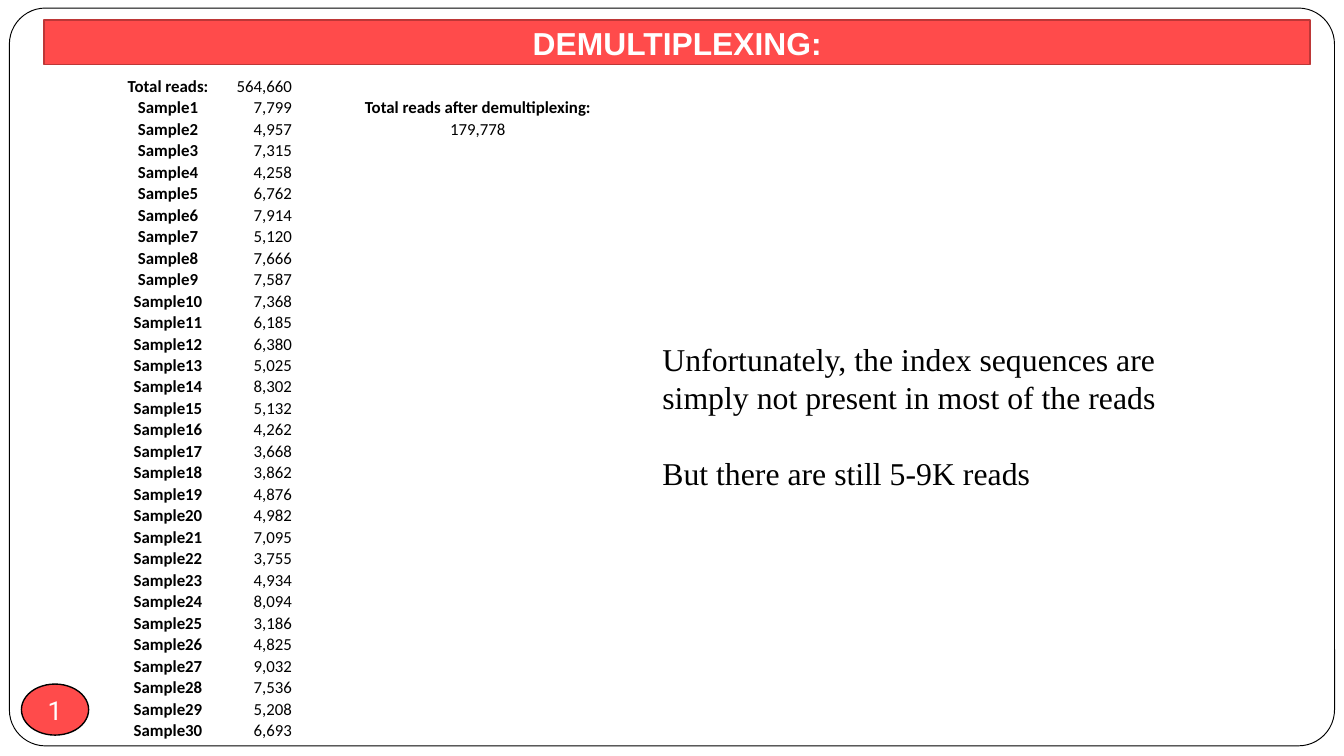
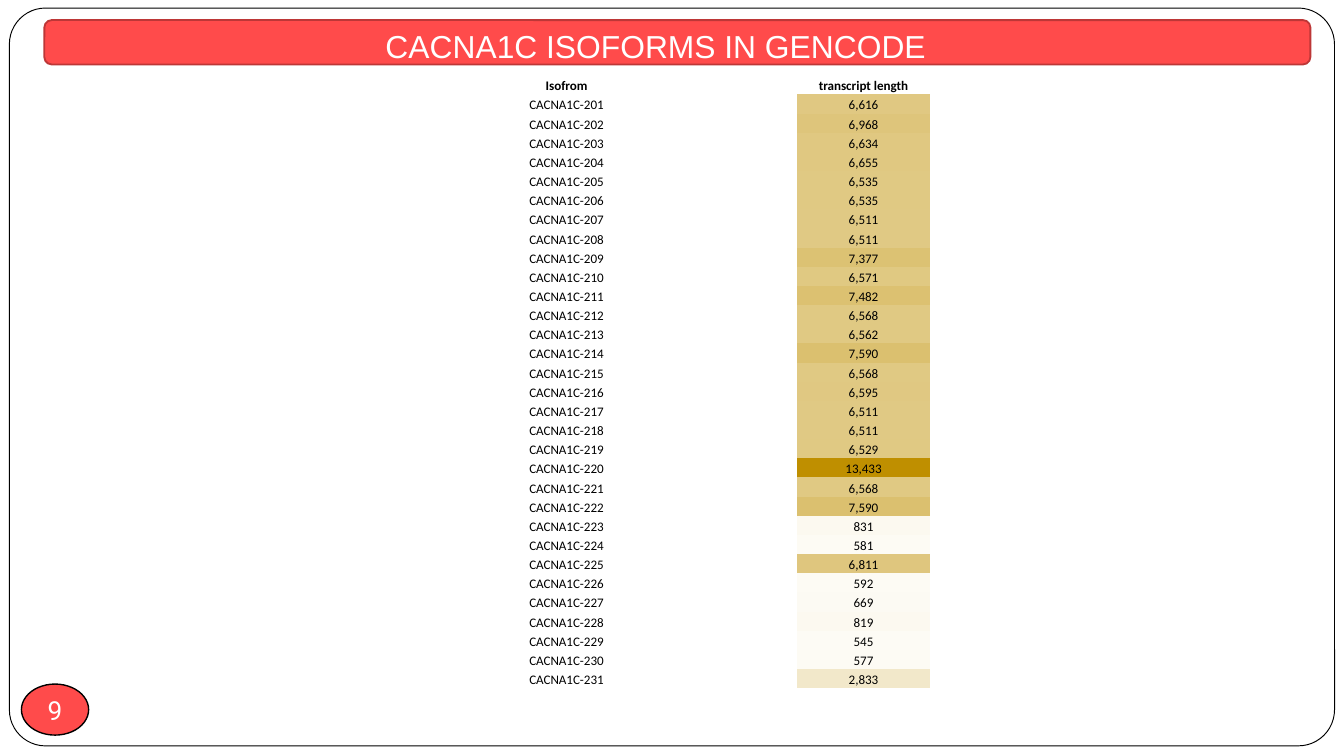
from lxml import etree
from pptx import Presentation
from pptx.dml.color import RGBColor
from pptx.enum.shapes import MSO_SHAPE
from pptx.enum.text import MSO_ANCHOR, MSO_AUTO_SIZE, PP_ALIGN
from pptx.oxml.ns import qn
from pptx.util import Inches, Pt

CENTER, LEFT, RIGHT = PP_ALIGN.CENTER, PP_ALIGN.LEFT, PP_ALIGN.RIGHT
TOP, MIDDLE, BOTTOM = MSO_ANCHOR.TOP, MSO_ANCHOR.MIDDLE, MSO_ANCHOR.BOTTOM
ROUNDED, OVAL = MSO_SHAPE.ROUNDED_RECTANGLE, MSO_SHAPE.OVAL

WHITE = RGBColor(0xFF, 0xFF, 0xFF)
BLACK = RGBColor(0x00, 0x00, 0x00)
RED = RGBColor(0xFF, 0x4B, 0x4B)
DARK_RED = RGBColor(0xBD, 0x37, 0x37)
PALE_GOLD = RGBColor(0xFD, 0xFB, 0xF5)
GOLD = RGBColor(0xBF, 0x8F, 0x00)

NO_STYLE_NO_GRID = "{2D5ABB26-0587-4C30-8999-92F81FD0307C}"
CELL_MARGIN = Pt(0.56)
FRAME = (0.07, 0.06, 9.86, 5.49)
BAND = (0.33, 0.15, 9.42, 0.33)
BADGE = (0.16, 5.09, 0.5, 0.38)

# Content
TOTAL_READS = 564660
SAMPLE_READS = [
    7799, 4957, 7315, 4258, 6762, 7914, 5120, 7666, 7587, 7368,
    6185, 6380, 5025, 8302, 5132, 4262, 3668, 3862, 4876, 4982,
    7095, 3755, 4934, 8094, 3186, 4825, 9032, 7536, 5208, 6693,
]
DEMULTIPLEXED = {1: "Total reads after demultiplexing:", 2: "179,778"}
REMARKS = [
    "Unfortunately, the index sequences are simply not present in most of the reads",
    "But there are still 5-9K reads",
]
TRANSCRIPT_LENGTHS = [
    6616, 6968, 6634, 6655, 6535, 6535, 6511, 6511, 7377, 6571, 7482,
    6568, 6562, 7590, 6568, 6595, 6511, 6511, 6529, 13433, 6568, 7590,
    831, 581, 6811, 592, 669, 819, 545, 577, 2833,
]


def box(position):
    return [Inches(value) for value in position]


def style(paragraph, font_name, size, color, bold=False, align=LEFT):
    paragraph.alignment = align
    font = paragraph.font
    font.name, font.size, font.bold = font_name, Pt(size), bold
    font.color.rgb = color


def paint(shape, fill, line, width):
    shape.fill.solid()
    shape.fill.fore_color.rgb = fill
    shape.line.color.rgb = line
    shape.line.width = Pt(width)


def add_panel(slide, kind, position, fill, line, width):
    shape = slide.shapes.add_shape(kind, *box(position))
    shape.shadow.inherit = False
    paint(shape, fill, line, width)
    return shape


def add_frame(slide):
    """Draw the page frame, then move it to the layout that all slides share."""
    frame = add_panel(slide, ROUNDED, FRAME, WHITE, BLACK, 0.5)
    frame.adjustments[0] = 0.049
    slide.slide_layout.shapes.element.insert(2, frame.element)


def add_badge(slide, number):
    badge = add_panel(slide, OVAL, BADGE, RED, BLACK, 0.75)
    text = badge.text_frame
    text.margin_left = text.margin_right = text.margin_top = text.margin_bottom = 0
    text.word_wrap = False
    text.vertical_anchor = MIDDLE
    text.text = str(number)
    style(text.paragraphs[0], "Roboto", 14, WHITE, align=CENTER)


def set_title(slide, wording, position, bold, anchor):
    title = slide.shapes.title
    title.left, title.top, title.width, title.height = box(position)
    text = title.text_frame
    text.text = wording
    text.auto_size = MSO_AUTO_SIZE.NONE
    text.vertical_anchor = anchor
    style(text.paragraphs[0], "Arial", 17, WHITE, bold, CENTER)
    return title


def add_grid(slide, rows, position, column_widths, size, aligns, is_bold, fill_for):
    frame = slide.shapes.add_table(len(rows), len(column_widths), *box(position))
    table = frame.table
    table.first_row = table.horz_banding = False
    table._tbl.tblPr.find(qn("a:tableStyleId")).text = NO_STYLE_NO_GRID
    for column, width in zip(table.columns, column_widths):
        column.width = Inches(width)
    for row_index, values in enumerate(rows):
        table.rows[row_index].height = Inches(position[3] / len(rows))
        for column_index, value in enumerate(values):
            cell = table.cell(row_index, column_index)
            cell.margin_left = cell.margin_right = cell.margin_top = CELL_MARGIN
            cell.margin_bottom = 0
            cell.vertical_anchor = BOTTOM
            color = fill_for(value)
            if color is None:
                cell.fill.background()
            else:
                cell.fill.solid()
                cell.fill.fore_color.rgb = color
            paragraph = cell.text_frame.paragraphs[0]
            style(paragraph, "Calibri", size, BLACK,
                  is_bold(row_index, column_index), aligns[column_index])
            if value:
                paragraph.text = f"{value:,}" if isinstance(value, int) else value
            else:
                # Keeps empty cells from stretching the row
                etree.SubElement(paragraph._p, qn("a:endParaRPr"), sz=str(size * 100))


def length_color(value):
    """Shade a transcript length between the shortest and the longest."""
    if not isinstance(value, int):
        return None
    low, high = min(TRANSCRIPT_LENGTHS), max(TRANSCRIPT_LENGTHS)
    share = (value - low) / (high - low)
    return RGBColor(*(round(a + (b - a) * share) for a, b in zip(PALE_GOLD, GOLD)))


def build_demultiplexing(slide):
    # The title is its own band here
    add_badge(slide, 1)
    title = set_title(slide, "DEMULTIPLEXING:", BAND, True, MIDDLE)
    outline = etree.SubElement(title.element.spPr, qn("a:prstGeom"), prst="roundRect")
    etree.SubElement(outline, qn("a:avLst"))
    paint(title, RED, DARK_RED, 1)

    # Reads per sample
    reads = [("Total reads:", TOTAL_READS)]
    reads += [(f"Sample{n}", count) for n, count in enumerate(SAMPLE_READS, start=1)]
    rows = [(*pair, "", DEMULTIPLEXED.get(index, "")) for index, pair in enumerate(reads)]
    add_grid(slide, rows, (0.83, 0.56, 3.59, 4.9), (0.84, 0.51, 0.51, 1.73), 9,
             (CENTER, RIGHT, CENTER, CENTER),
             lambda row, column: column == 0 or (row, column) == (1, 3),
             lambda value: None)

    # Remarks
    text = slide.shapes.add_textbox(*box((4.83, 2.48, 4.25, 1.25))).text_frame
    text.word_wrap = True
    text.text = "\n".join(REMARKS)
    for paragraph in text.paragraphs:
        style(paragraph, "Times New Roman", 17, BLACK)
    text.paragraphs[1].space_before = Pt(20)


def build_isoforms(slide):
    # The title lies over a plain band
    add_badge(slide, 9)
    band = add_panel(slide, ROUNDED, BAND, RED, DARK_RED, 1)
    title = set_title(slide, "CACNA1C ISOFORMS IN GENCODE",
                      (1.17, 0.15, 7.42, 0.39), False, TOP)
    band.element.addnext(title.element)

    # Transcript lengths
    rows = [("Isofrom", "transcript length")]
    rows += [(f"CACNA1C-{n}", length)
             for n, length in enumerate(TRANSCRIPT_LENGTHS, start=201)]
    add_grid(slide, rows, (2.5, 0.56, 4.42, 4.57), (3.43, 0.99), 7, (CENTER, CENTER),
             lambda row, column: row == 0, length_color)


def main():
    presentation = Presentation()
    presentation.slide_width = Inches(10)
    presentation.slide_height = presentation.slide_width * 9 // 16
    title_only = presentation.slide_layouts[5]
    slides = [presentation.slides.add_slide(title_only) for _ in range(2)]
    add_frame(slides[0])
    build_demultiplexing(slides[0])
    build_isoforms(slides[1])
    presentation.save("out.pptx")


if __name__ == "__main__":
    main()
